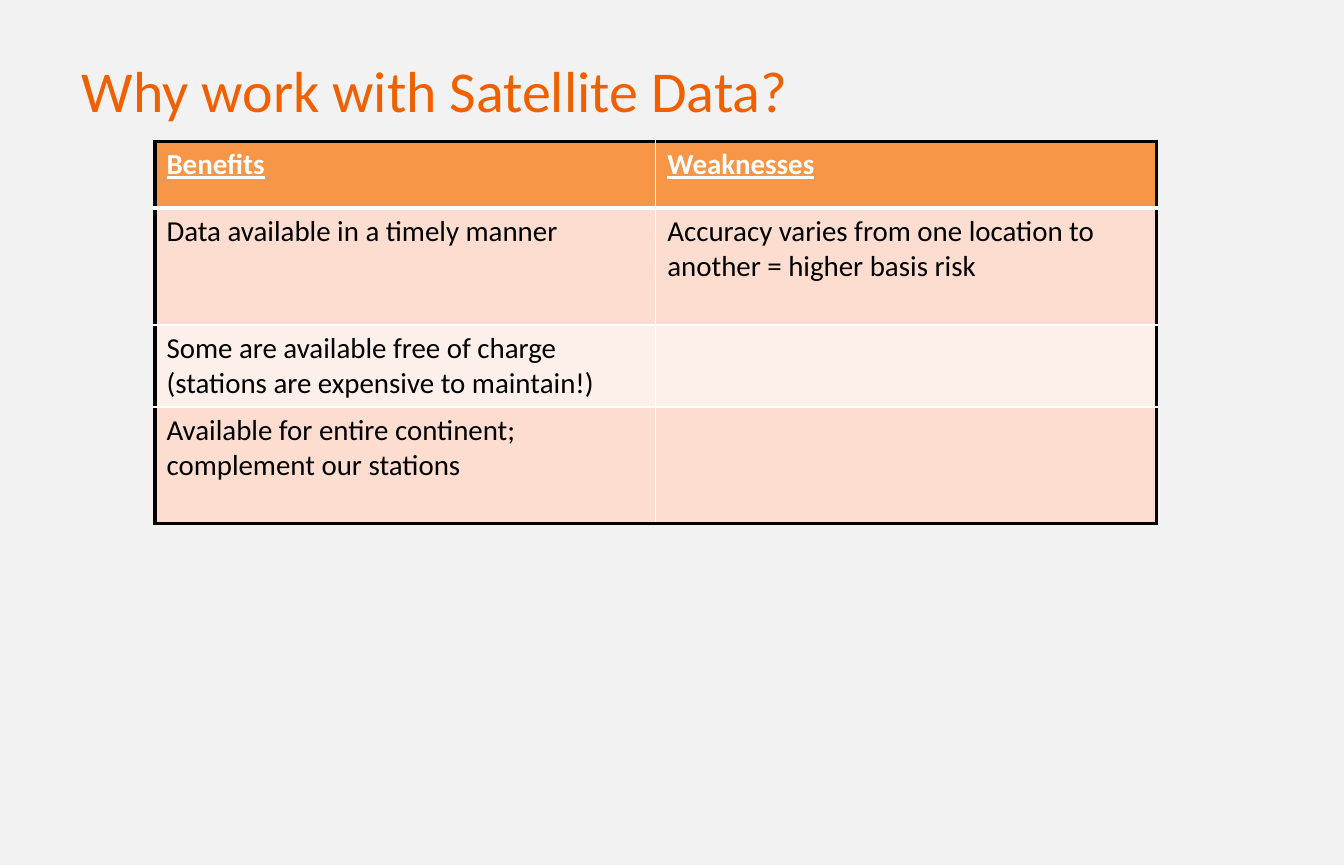
from lxml import etree
from pptx import Presentation
from pptx.dml.color import RGBColor
from pptx.enum.text import MSO_ANCHOR
from pptx.oxml.ns import qn
from pptx.util import Inches, Pt

TOP = MSO_ANCHOR.TOP
COLORS = {
    "background": "F2F2F2",
    "title": "F16000",
    "header": "F79646",
    "odd": "FCDDCF",
    "even": "FDEFE9",
    "frame": "000000",
    "grid": "FFFFFF",
    "body_text": "000000",
    "header_text": "FFFFFF",
}
FORMATS = {
    "title": {"size": Pt(36), "name": "Calibri"},
    "header": {"size": Pt(18), "name": "Calibri", "bold": True, "underline": True},
    "body": {"size": Pt(18), "name": "Calibri", "bold": False, "underline": False},
}
FRAME = ("frame", 2.25)
GRID = ("grid", 1)
HEADER_RULE = ("grid", 3)

ROWS = [
    ("Benefits", "Weaknesses"),
    ("Data available in a timely manner",
     "Accuracy varies from one location to another = higher basis risk"),
    ("Some are available free of charge (stations are expensive to maintain!)", ""),
    ("Available for entire continent; complement our stations", ""),
]
ROW_HEIGHTS = [0.58, 1.01, 0.71, 1.01]
COLUMN_WIDTH = 4.33


def color(name):
    return RGBColor.from_string(COLORS[name])


def write_text(frame, text, style, color_name):
    span = frame.paragraphs[0].add_run()
    span.text = text
    for attribute, value in FORMATS[style].items():
        setattr(span.font, attribute, value)
    span.font.color.rgb = color(color_name)


def add_title(page, text):
    box = page.shapes.add_textbox(Inches(0.61), Inches(0.42), Inches(10.64), Inches(0.8))
    box.text_frame.word_wrap = True
    box.text_frame.vertical_anchor = TOP
    write_text(box.text_frame, text, "title", "title")


def add_border(cell, side, border):
    color_name, width = border
    properties = cell._tc.get_or_add_tcPr()
    line = etree.SubElement(properties, qn("a:ln" + side), w=str(Pt(width)))
    fill = etree.SubElement(line, qn("a:solidFill"))
    etree.SubElement(fill, qn("a:srgbClr"), val=COLORS[color_name])


def cell_borders(row, column):
    """Black outer frame, white inner grid, thicker rule under the header."""
    last_row, last_column = len(ROWS) - 1, len(ROWS[0]) - 1
    inner_top = HEADER_RULE if row == 1 else GRID
    inner_bottom = HEADER_RULE if row == 0 else GRID
    return {
        "L": FRAME if column == 0 else GRID,
        "R": FRAME if column == last_column else GRID,
        "T": FRAME if row == 0 else inner_top,
        "B": FRAME if row == last_row else inner_bottom,
    }


def add_comparison_table(page):
    columns = len(ROWS[0])
    table = page.shapes.add_table(
        len(ROWS), columns, Inches(1.34), Inches(1.22),
        Inches(COLUMN_WIDTH * columns), Inches(sum(ROW_HEIGHTS))).table
    for column in table.columns:
        column.width = Inches(COLUMN_WIDTH)
    for row, texts in enumerate(ROWS):
        table.rows[row].height = Inches(ROW_HEIGHTS[row])
        style = "body" if row else "header"
        band = ("odd" if row % 2 else "even") if row else "header"
        for column, text in enumerate(texts):
            cell = table.cell(row, column)
            for side, border in cell_borders(row, column).items():
                add_border(cell, side, border)
            cell.fill.solid()
            cell.fill.fore_color.rgb = color(band)
            if text:
                write_text(cell.text_frame, text, style, style + "_text")


def main():
    deck = Presentation()
    deck.slide_width, deck.slide_height = Inches(11.62), Inches(7.48)
    page = deck.slides.add_slide(deck.slide_layouts[6])

    # Background
    page.background.fill.solid()
    page.background.fill.fore_color.rgb = color("background")

    # Title and comparison table
    add_title(page, "Why work with Satellite Data?")
    add_comparison_table(page)

    deck.save("out.pptx")


if __name__ == "__main__":
    main()
